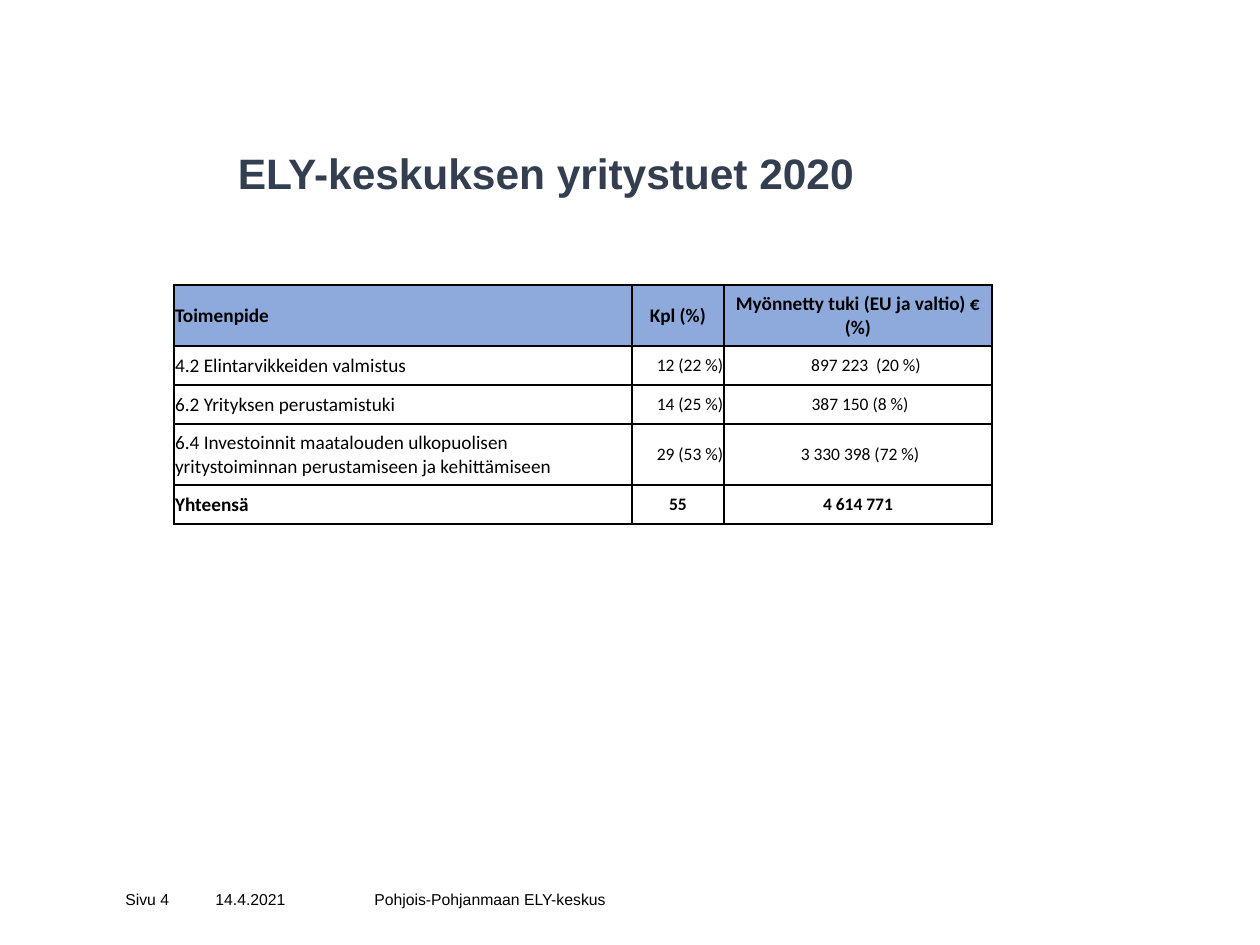
from lxml import etree
from pptx import Presentation
from pptx.dml.color import RGBColor
from pptx.enum.text import MSO_ANCHOR, PP_ALIGN
from pptx.oxml.ns import qn
from pptx.util import Pt

LEFT, CENTER, RIGHT = PP_ALIGN.LEFT, PP_ALIGN.CENTER, PP_ALIGN.RIGHT
MIDDLE = MSO_ANCHOR.MIDDLE
EMU_PER_PX = 914400 / 126
THEME = {
    "black": "000000", "title": "333F50", "header": "8EA9DB",
    "text_font": "Arial", "table_font": "Calibri",
    "title_size": 24.3, "footer_size": 9, "label_size": 11, "value_size": 10,
    "border_width": 1,
}


def px(length):
    return round(length * EMU_PER_PX)


def write(frame, text, font, size, color, align=LEFT, bold=False):
    frame.word_wrap = True
    para = frame.paragraphs[0]
    para.alignment = align
    span = para.add_run()
    span.text = text
    span.font.name = font
    span.font.size = Pt(size)
    span.font.bold = bold
    span.font.color.rgb = RGBColor.from_string(color)


deck = Presentation()
deck.slide_width, deck.slide_height = px(1260), px(945)
page = deck.slides.add_slide(deck.slide_layouts[6])

title = page.shapes.add_textbox(px(134), px(141), px(824), px(79)).text_frame
title.vertical_anchor = MIDDLE
title.margin_top, title.margin_bottom = 0, px(17)
write(title, "ELY-keskuksen yritystuet 2020", THEME["text_font"],
      THEME["title_size"], THEME["title"], CENTER, True)

footers = [
    (113, 90, "Sivu 4"),
    (203, 159, "14.4.2021"),
    (362, 556, "Pohjois-Pohjanmaan ELY-keskus"),
]
for left, width, text in footers:
    box = page.shapes.add_textbox(px(left), px(890), px(width), px(19)).text_frame
    box.vertical_anchor = MIDDLE
    box.margin_top = box.margin_bottom = 0
    write(box, text, THEME["text_font"], THEME["footer_size"], THEME["black"])

rows = [
    ("Toimenpide", "Kpl (%)", "Myönnetty tuki (EU ja valtio) € (%)"),
    ("4.2 Elintarvikkeiden valmistus", "12 (22 %)", "897 223  (20 %)"),
    ("6.2 Yrityksen perustamistuki", "14 (25 %)", "387 150 (8 %)"),
    ("6.4 Investoinnit maatalouden ulkopuolisen yritystoiminnan perustamiseen ja kehittämiseen",
     "29 (53 %)", "3 330 398 (72 %)"),
    ("Yhteensä", "55", "4 614 771"),
]
column_widths = [458, 92, 268]
row_heights = [61, 39, 39, 61, 39]
amount_indents = [1, 17, 5, 5, 1]
last_row = len(rows) - 1

table = page.shapes.add_table(len(rows), len(column_widths), px(174), px(285),
                              px(sum(column_widths)), px(sum(row_heights))).table
table.first_row = table.horz_banding = False
for column, width in zip(table.columns, column_widths):
    column.width = px(width)
for row, height in zip(table.rows, row_heights):
    row.height = px(height)

for r, texts in enumerate(rows):
    for c, text in enumerate(texts):
        cell = table.cell(r, c)
        is_header = r == 0
        is_strong = r in (0, last_row)
        cell.vertical_anchor = MIDDLE
        cell.margin_left = px(amount_indents[r] if c == 2 else 1)
        cell.margin_right = cell.margin_top = px(1)
        cell.margin_bottom = 0
        properties = cell._tc.get_or_add_tcPr()
        for side in ("a:lnL", "a:lnR", "a:lnT", "a:lnB"):
            border = etree.SubElement(properties, qn(side), w=str(Pt(THEME["border_width"])))
            paint = etree.SubElement(border, qn("a:solidFill"))
            etree.SubElement(paint, qn("a:srgbClr"), val=THEME["black"])
        if is_header:
            cell.fill.solid()
            cell.fill.fore_color.rgb = RGBColor.from_string(THEME["header"])
        else:
            cell.fill.background()
        align = LEFT if c == 0 else RIGHT if c == 1 and not is_strong else CENTER
        size = THEME["label_size"] if is_header or c == 0 else THEME["value_size"]
        write(cell.text_frame, text, THEME["table_font"], size, THEME["black"], align, is_strong)

deck.save("out.pptx")
